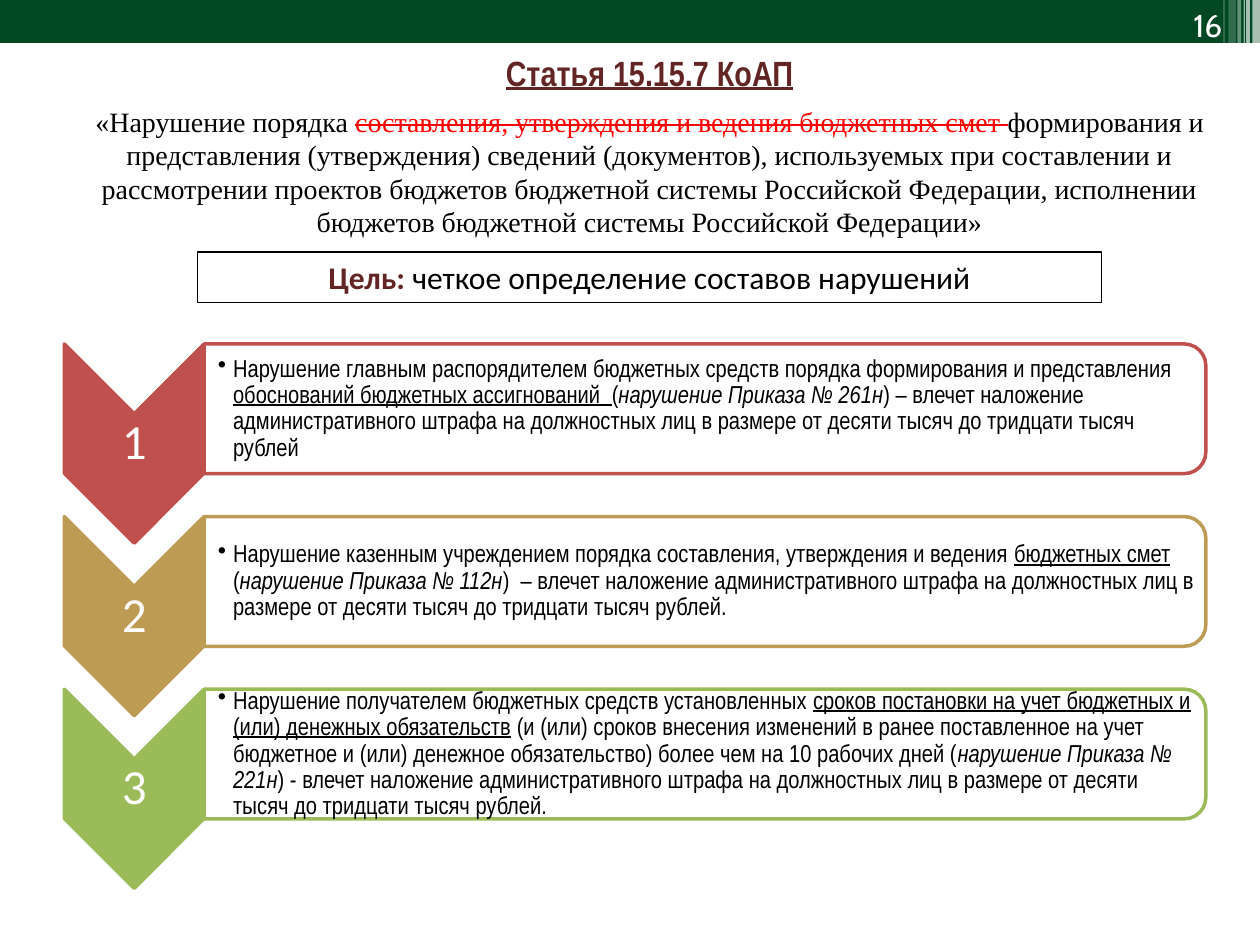
from lxml import etree
from pptx import Presentation
from pptx.dml.color import RGBColor
from pptx.enum.shapes import MSO_SHAPE
from pptx.enum.text import MSO_ANCHOR, PP_ALIGN
from pptx.oxml.ns import qn
from pptx.util import Inches, Pt

RECT = MSO_SHAPE.RECTANGLE
CHEVRON = MSO_SHAPE.CHEVRON
ROUND_TOP = MSO_SHAPE.ROUND_2_SAME_RECTANGLE
TOP, MIDDLE = MSO_ANCHOR.TOP, MSO_ANCHOR.MIDDLE
LEFT, CENTER, RIGHT = PP_ALIGN.LEFT, PP_ALIGN.CENTER, PP_ALIGN.RIGHT

WHITE = RGBColor(0xFF, 0xFF, 0xFF)
BLACK = RGBColor(0, 0, 0)
RED = RGBColor(0xFF, 0, 0)
MAROON = RGBColor(0x63, 0x25, 0x23)
DARK_GREEN = RGBColor(0, 0x48, 0x21)
BRICK = RGBColor(0xC0, 0x50, 0x4D)
OCHRE = RGBColor(0xBD, 0x9B, 0x53)
GREEN = RGBColor(0x9B, 0xBB, 0x59)

NARROW, SERIF, SANS, CABIN = "Arial Narrow", "Times New Roman", "Calibri", "Cabin"

STRIPES = [
    (9.94, 0.06, 0.34, 65),
    (9.89, 0.03, 0.34, 65),
    (9.87, 0.01, 0.34, 60),
    (9.82, 0.03, 0.34, 40),
    (9.75, 0.06, 0.36, 20),
    (9.71, 0.01, 0.36, 30),
]
UNDERLINE, ITALIC = {"underline": True}, {"italic": True}
VIOLATIONS = [
    (BRICK, [
        ("Нарушение главным распорядителем бюджетных средств порядка формирования "
         "и представления ", {}),
        ("обоснований бюджетных ассигнований  ", UNDERLINE),
        ("(", {}),
        ("нарушение Приказа № 261н", ITALIC),
        (") – влечет наложение административного штрафа на должностных лиц "
         "в размере от десяти тысяч до тридцати тысяч рублей", {}),
    ]),
    (OCHRE, [
        ("Нарушение казенным учреждением порядка составления, утверждения и ведения ", {}),
        ("бюджетных смет", UNDERLINE),
        (" (", {}),
        ("нарушение Приказа № 112н", ITALIC),
        (")  – влечет наложение административного штрафа на должностных лиц "
         "в размере от десяти тысяч до тридцати тысяч рублей.", {}),
    ]),
    (GREEN, [
        ("Нарушение получателем бюджетных средств установленных ", {}),
        ("сроков постановки на учет бюджетных и (или) денежных обязательств", UNDERLINE),
        (" (и (или) сроков внесения изменений в ранее поставленное на учет бюджетное "
         "и (или) денежное обязательство) более чем на 10 рабочих дней (", {}),
        ("нарушение Приказа № 221н", ITALIC),
        (") - влечет наложение административного штрафа на должностных лиц "
         "в размере от десяти тысяч до тридцати тысяч рублей.", {}),
    ]),
]


def add_run(p, text, font=SANS, size=18, color=BLACK, bold=False,
            italic=False, underline=False, strike=False):
    r = p.add_run()
    r.text = text
    r.font.name = font
    r.font.size = Pt(size)
    r.font.color.rgb = color
    r.font.bold = bold
    r.font.italic = italic
    r.font.underline = underline
    if strike:
        r._r.get_or_add_rPr().set("strike", "sngStrike")


class SlideBuilder:
    def __init__(self, slide):
        self.s = slide

    def shape(self, kind, x, y, w, h, fill=None, alpha=100, line=None,
              line_width=2, rotation=0):
        sp = self.s.shapes.add_shape(kind, Inches(x), Inches(y), Inches(w), Inches(h))
        sp.shadow.inherit = False
        sp.rotation = rotation
        if fill is None:
            sp.fill.background()
        else:
            sp.fill.solid()
            sp.fill.fore_color.rgb = fill
            if alpha < 100:
                color = sp.fill._xPr.find(qn("a:solidFill"))[0]
                etree.SubElement(color, qn("a:alpha")).set("val", str(alpha * 1000))
        if line is None:
            sp.line.fill.background()
        else:
            sp.line.color.rgb = line
            sp.line.width = Pt(line_width)
        return sp

    def turned(self, kind, x, y, w, h, **style):
        return self.shape(kind, x + (w - h) / 2, y + (h - w) / 2, h, w,
                          rotation=90, **style)

    def frame(self, sp, anchor=TOP, insets=(0.1, 0.05, 0.1, 0.05)):
        tf = sp.text_frame
        tf.word_wrap = True
        tf.vertical_anchor = anchor
        tf.margin_left, tf.margin_top, tf.margin_right, tf.margin_bottom = map(Inches, insets)
        return tf

    def textbox(self, x, y, w, h, **style):
        sp = self.s.shapes.add_textbox(Inches(x), Inches(y), Inches(w), Inches(h))
        return self.frame(sp, **style)

    def paragraph(self, p, runs, align=CENTER, spacing=None, before=None,
                  bullet=False, **base):
        p.alignment = align
        if spacing:
            p.line_spacing = spacing
        if before:
            p.space_before = Pt(before)
        if bullet:
            pPr = p._p.get_or_add_pPr()
            pPr.set("marL", str(Inches(0.12)))
            pPr.set("indent", str(-Inches(0.12)))
            etree.SubElement(pPr, qn("a:buChar")).set("char", "•")
        for text, extra in runs:
            add_run(p, text, **{**base, **extra})

    def header(self, number):
        self.shape(RECT, 0, 0, 10, 0.34, fill=DARK_GREEN)
        for x, w, h, alpha in STRIPES:
            self.shape(RECT, x, 0, w, h, fill=WHITE, alpha=alpha)
        tf = self.textbox(8.9, 0, 0.9, 0.37)
        self.paragraph(tf.paragraphs[0], [(number, {})], align=RIGHT,
                       font=CABIN, color=WHITE)

    def violation(self, y, number, color, runs):
        self.turned(CHEVRON, 0.51, y, 1.11, 1.58, fill=color, line=color)
        tf = self.textbox(0.51, y + 0.55, 1.11, 0.48, anchor=MIDDLE, insets=(0.02,) * 4)
        self.paragraph(tf.paragraphs[0], [(number, {})], spacing=0.9,
                       size=28, color=WHITE)
        self.turned(ROUND_TOP, 1.62, y, 7.95, 1.03, fill=WHITE, alpha=90, line=color)
        tf = self.textbox(1.62, y + 0.05, 7.9, 0.93, anchor=MIDDLE,
                          insets=(0.11, 0.01, 0.01, 0.01))
        self.paragraph(tf.paragraphs[0], runs, align=LEFT, spacing=0.9,
                       bullet=True, font=NARROW, size=14)


def main():
    prs = Presentation()
    prs.slide_width, prs.slide_height = Inches(10), Inches(7.5)
    b = SlideBuilder(prs.slides.add_slide(prs.slide_layouts[6]))
    b.header("16")

    tf = b.textbox(0.58, 0.36, 9.15, 1.63)
    b.paragraph(tf.paragraphs[0], [("Статья 15.15.7 КоАП", {})], font=NARROW,
                size=20, color=MAROON, bold=True, underline=True)
    b.paragraph(tf.add_paragraph(), [
        ("«Нарушение порядка ", {}),
        ("составления, утверждения и ведения бюджетных смет ",
         {"color": RED, "strike": True}),
        ("формирования и представления (утверждения) сведений (документов), "
         "используемых при составлении и рассмотрении проектов бюджетов бюджетной "
         "системы Российской Федерации, исполнении бюджетов бюджетной системы "
         "Российской Федерации»", {}),
    ], before=6, font=SERIF, size=16)

    for i, (color, runs) in enumerate(VIOLATIONS):
        b.violation(2.73 + 1.37 * i, str(i + 1), color, runs)

    sp = b.shape(RECT, 1.57, 2, 7.17, 0.4, line=BLACK, line_width=0.75)
    b.paragraph(b.frame(sp).paragraphs[0], [
        ("Цель: ", {"color": MAROON, "bold": True}),
        ("четкое определение составов нарушений", {}),
    ])
    prs.save("out.pptx")


if __name__ == "__main__":
    main()
